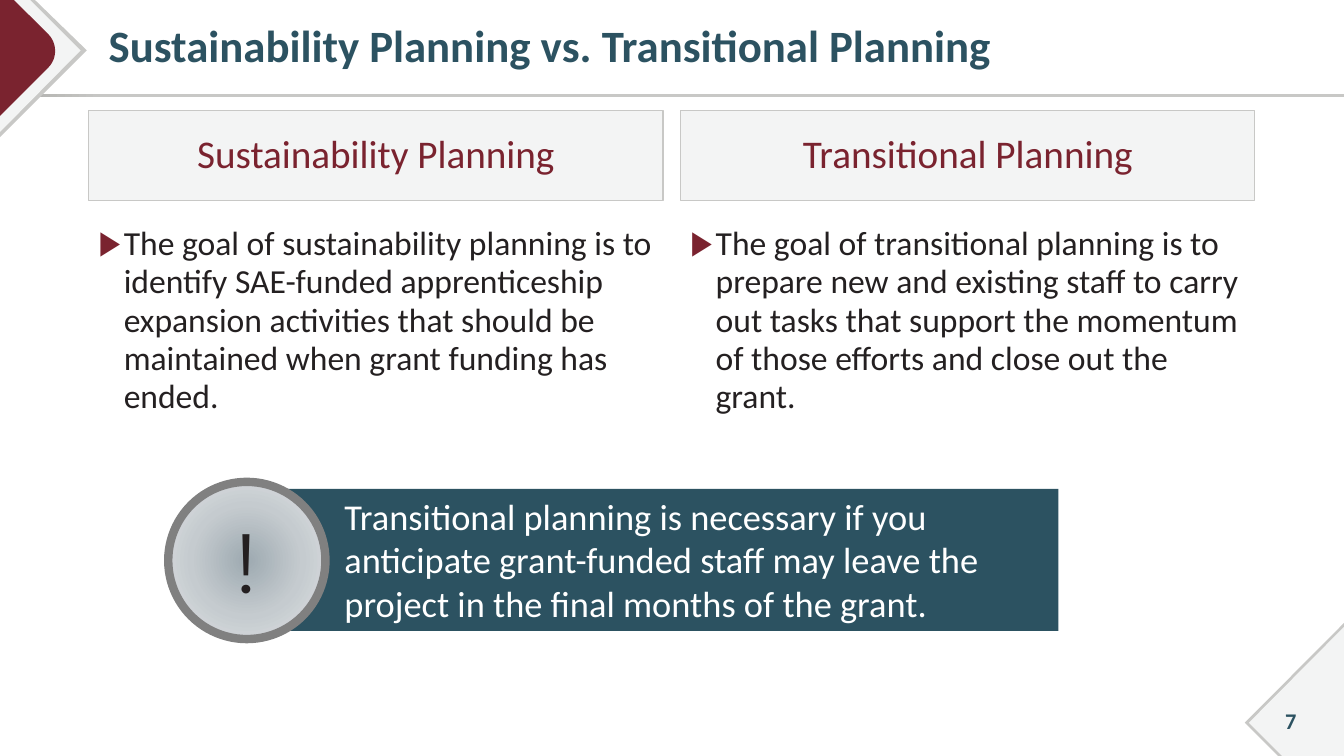
from dataclasses import dataclass
from typing import Any

from pptx import Presentation
from pptx.dml.color import RGBColor
from pptx.enum.shapes import MSO_SHAPE
from pptx.enum.text import MSO_ANCHOR, MSO_AUTO_SIZE, PP_ALIGN
from pptx.oxml import parse_xml
from pptx.oxml.ns import nsdecls, qn
from pptx.util import Pt

RECT, OVAL = MSO_SHAPE.RECTANGLE, MSO_SHAPE.OVAL
TOP, MIDDLE = MSO_ANCHOR.TOP, MSO_ANCHOR.MIDDLE
LEFT, CENTER = PP_ALIGN.LEFT, PP_ALIGN.CENTER
FIXED = MSO_AUTO_SIZE.NONE

TEAL, RED, INK, WHITE = "2C5261", "7A232F", "242021", "FFFFFF"
SILVER, PALE, GRAY = "C8C8C6", "F3F4F4", "808080"
WIDE, TALL = 960, 540
COL_LEFT, COL_STEP, COL_WIDE = 63.2, 422.8, 410.4
FRAME = {"word_wrap": True, "auto_size": FIXED}


@dataclass
class Style:
    size: float
    color: str
    bold: bool = False
    align: Any = LEFT
    anchor: Any = MIDDLE
    space: float = 1.0
    indent: float = 0
    bullet: str = ""
    font: str = "Calibri"


@dataclass
class Patch:
    color: str
    points: list[tuple[float, float]]


@dataclass
class Column:
    head: str
    text: str
    slots: tuple[int, int]


def curve(*ends: tuple[float, float], steps: int = 12) -> list[tuple[float, float]]:
    a, b, c, d = ends
    points = []
    for i in range(steps + 1):
        t = i / steps
        u = 1 - t
        x, y = (u**3 * p + 3 * u * u * t * q + 3 * u * t * t * r + t**3 * s
                for p, q, r, s in zip(a, b, c, d))
        points.append((x, y))
    return points


PATCHES = [
    Patch(SILVER, [(0, 0), (25, 0), (62, 36), (0, 98)]),
    Patch(PALE, [(0, 0), (21.6, 0), (57.6, 36), (0, 94.3)]),
    Patch(RED, [(0, 0), (10, 0),
                *curve((34.6, 24.5), (41, 31), (41, 41.8), (34.6, 48.2)),
                (0, 82.8)]),
    Patch(SILVER, [(WIDE, 445), (WIDE, TALL), (913, TALL), (889.2, 516.2)]),
    Patch(PALE, [(WIDE, 447.8), (WIDE, TALL), (915.8, TALL), (892.1, 516.2)]),
]
COLUMNS = [
    Column("Sustainability Planning",
           "The goal of sustainability planning is to identify SAE-funded "
           "apprenticeship expansion activities that should be maintained when "
           "grant funding has ended.", (1, 2)),
    Column("Transitional Planning",
           "The goal of transitional planning is to prepare new and existing "
           "staff to carry out tasks that support the momentum of those efforts "
           "and close out the grant.", (3, 4)),
]
TITLE = Style(32, TEAL, bold=True, space=0.9)
HEAD = Style(28, RED, align=CENTER, space=0.95)
BODY = Style(24, INK, anchor=TOP, space=0.95, indent=18, bullet="▶")
NOTE = Style(26, WHITE, anchor=TOP, indent=54)
MARK = Style(60, INK, align=CENTER, anchor=TOP, font="Montserrat")
PAGE = Style(16, TEAL, bold=True, align=CENTER)


def rgb(code: str) -> RGBColor:
    return RGBColor.from_string(code)


def assign(item: Any, values: dict[str, Any]) -> None:
    for name, value in values.items():
        setattr(item, name, value)


def place(shape: Any, x: float, y: float, w: float, h: float) -> None:
    assign(shape, {"left": Pt(x), "top": Pt(y), "width": Pt(w), "height": Pt(h)})


def paint(shape: Any, fill: str, line: str = "", width: float = 0.75) -> None:
    shape.fill.solid()
    shape.fill.fore_color.rgb = rgb(fill)
    edge(shape, line, width)


def edge(shape: Any, line: str, width: float) -> None:
    if line:
        shape.line.color.rgb = rgb(line)
        shape.line.width = Pt(width)
    else:
        shape.line.fill.background()


def blend(shape: Any, stops: dict[int, str], form: str) -> None:
    shape.fill.gradient()
    old = shape.fill._xPr.find(qn("a:gradFill"))
    list_xml = "".join(f'<a:gs pos="{at * 1000}"><a:srgbClr val="{code}"/></a:gs>'
                       for at, code in stops.items())
    new = parse_xml(f'<a:gradFill {nsdecls("a")} rotWithShape="1">'
                    f'<a:gsLst>{list_xml}</a:gsLst>{form}</a:gradFill>')
    old.getparent().replace(old, new)


def write(shape: Any, text: str, style: Style) -> Any:
    frame = shape.text_frame
    assign(frame, FRAME | {"vertical_anchor": style.anchor})
    para = frame.paragraphs[0]
    props = para._p.get_or_add_pPr()
    if style.indent:
        props.set("marL", str(Pt(style.indent)))
        props.set("indent", str(-Pt(style.indent) if style.bullet else 0))
    if style.bullet:
        props.append(parse_xml(f'<a:buClr {nsdecls("a")}><a:srgbClr val="{RED}"/></a:buClr>'))
        props.append(parse_xml(f'<a:buChar {nsdecls("a")} char="{style.bullet}"/>'))
    assign(para, {"alignment": style.align, "line_spacing": style.space,
                  "space_before": Pt(0)})
    run = para.add_run()
    run.text = text
    assign(run.font, {"size": Pt(style.size), "name": style.font, "bold": style.bold})
    run.font.color.rgb = rgb(style.color)
    return run


def shape_at(slide: Any, kind: Any, *box: float) -> Any:
    shape = slide.shapes.add_shape(kind, *map(Pt, box))
    shape.shadow.inherit = False
    return shape


def draw_patch(slide: Any, patch: Patch) -> None:
    first, *rest = [(Pt(x), Pt(y)) for x, y in patch.points]
    pen = slide.shapes.build_freeform(*first)
    pen.add_line_segments(rest, close=True)
    shape = pen.convert_to_shape()
    shape.shadow.inherit = False
    paint(shape, patch.color)


def draw_column(slide: Any, column: Column, x: float) -> None:
    head, body = (slide.placeholders[slot] for slot in column.slots)
    place(head, x, 78.6, COL_WIDE, 64.8)
    paint(head, PALE, SILVER)
    write(head, column.head, HEAD)
    place(body, x, 157, COL_WIDE, 330.5)
    write(body, column.text, BODY)


def main() -> None:
    deck = Presentation()
    assign(deck, {"slide_width": Pt(WIDE), "slide_height": Pt(TALL)})
    slide = deck.slides.add_slide(deck.slide_layouts[4])

    rule = shape_at(slide, RECT, 0, 67, WIDE, 2.2)
    blend(rule, {0: "ABABA8", 8: SILVER, 100: SILVER}, '<a:lin ang="0" scaled="0"/>')
    edge(rule, "", 0)
    for patch in PATCHES:
        draw_patch(slide, patch)

    title = slide.shapes.title
    place(title, 63.2, 3.6, 872.6, 62)
    title.text_frame.margin_left = Pt(14.4)
    write(title, "Sustainability Planning vs. Transitional Planning", TITLE)
    for i, column in enumerate(COLUMNS):
        draw_column(slide, column, COL_LEFT + i * COL_STEP)

    note = shape_at(slide, RECT, 185, 349.2, 571, 101.5)
    paint(note, TEAL)
    write(note, "Transitional planning is necessary if you anticipate grant-funded "
          "staff may leave the project in the final months of the grant.", NOTE)

    badge = shape_at(slide, OVAL, 120.2, 344.2, 112.3, 112.3)
    blend(badge, {0: "9EAAB1", 50: "C5CBCF", 100: "E3E5E7"},
          '<a:path path="circle"><a:fillToRect l="50000" t="50000" '
          'r="50000" b="50000"/></a:path>')
    edge(badge, GRAY, 6)
    mark = write(badge, "!", MARK)
    mark.font._element.insert(0, parse_xml(
        f'<a:ln {nsdecls("a")} w="{Pt(0.75)}"><a:solidFill>'
        '<a:srgbClr val="F2F2F2"/></a:solidFill></a:ln>'))

    page = slide.shapes.add_textbox(*map(Pt, (896.4, 500.4, 51.1, 28.8)))
    write(page, "7", PAGE)
    deck.save("out.pptx")


if __name__ == "__main__":
    main()
